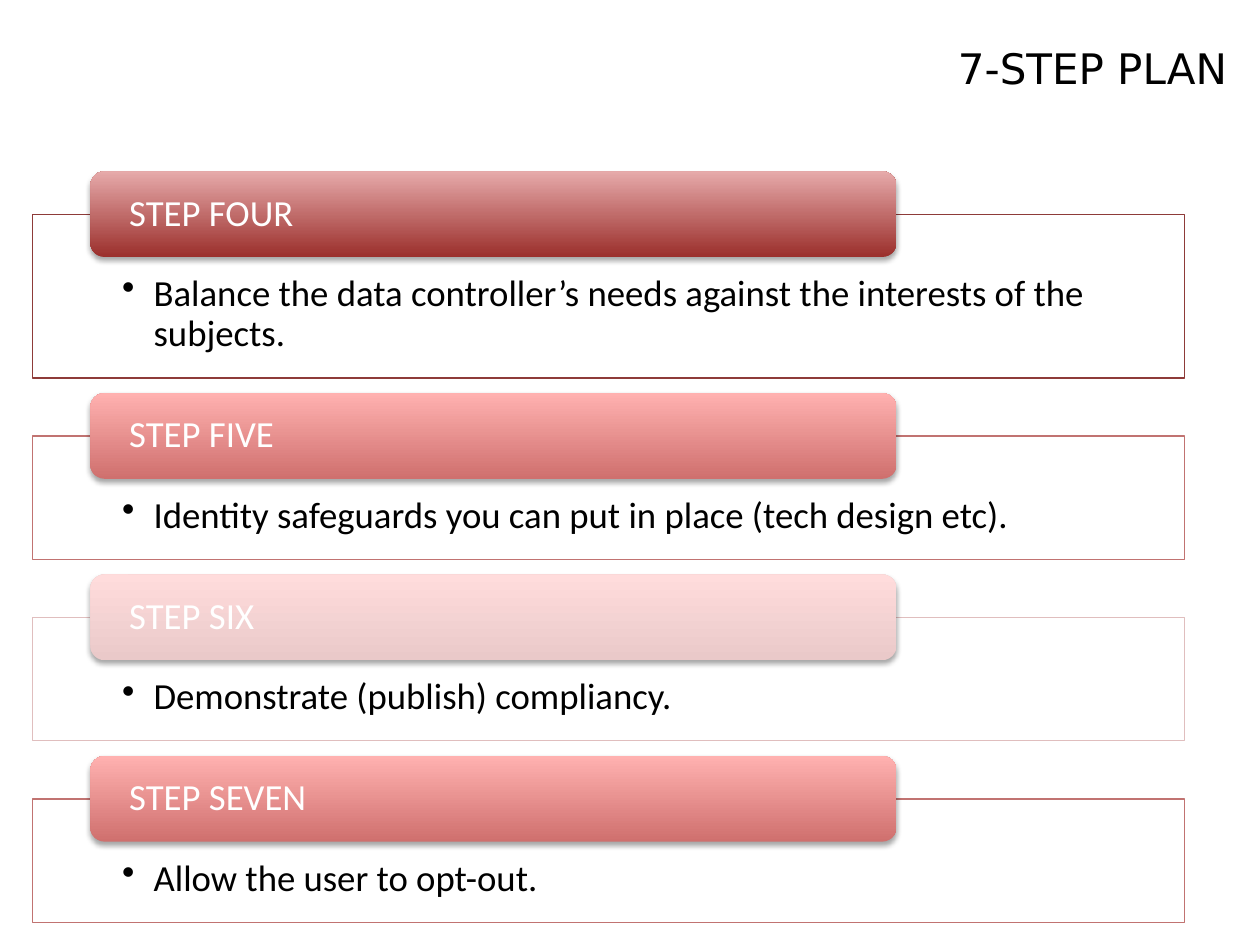
from lxml import etree
from pptx import Presentation
from pptx.dml.color import RGBColor
from pptx.enum import shapes, text
from pptx.oxml import parse_xml
from pptx.oxml.ns import nsdecls, qn
from pptx.util import Pt

COLORS = {
    "text": "000000", "light": "FFFFFF",
    "dark_line": "8E3B39", "dark_low": "9B2F2C", "dark_high": "E6AAAA",
    "mid_line": "C17371", "mid_low": "CF706E", "mid_high": "FFB1B0",
    "pale_line": "E0BEBE", "pale_low": "EAC9C9", "pale_high": "FFDCDC",
}
STEPS = [
    ("STEP FOUR", "Balance the data controller’s needs against the interests of the subjects.", "dark", 93.6),
    ("STEP FIVE", "Identity safeguards you can put in place (tech design etc).", "mid", 70.56),
    ("STEP SIX", "Demonstrate (publish) compliancy.", "pale", 70.56),
    ("STEP SEVEN", "Allow the user to opt-out.", "mid", 70.56),
]
LEFT, TOP, WIDTH, GAP = 18.72, 122.4, 658.08, 33.12


def rgb(name):
    return RGBColor.from_string(COLORS[name])


def write(sp, content, size=21, font="Calibri", color="text", align=text.PP_ALIGN.LEFT,
          anchor=text.MSO_ANCHOR.TOP, insets=(7.2, 3.6, 7.2, 3.6), spacing=None, bullet=False):
    tf = sp.text_frame
    tf.word_wrap = True
    tf.auto_size = text.MSO_AUTO_SIZE.NONE
    tf.vertical_anchor = anchor
    tf.margin_left, tf.margin_top, tf.margin_right, tf.margin_bottom = map(Pt, insets)
    p = tf.paragraphs[0]
    p.alignment = align
    if spacing:
        p.line_spacing = spacing
    if bullet:
        pPr = p._p.get_or_add_pPr()
        pPr.set("marL", str(Pt(18)))
        pPr.set("indent", str(-Pt(18)))
        etree.SubElement(pPr, qn("a:buChar"), char="•")
    r = p.add_run()
    r.text = content
    r.font.size = Pt(size)
    r.font.name = font
    r.font.color.rgb = rgb(color)


def add_box(s, kind, x, y, w, h):
    sp = s.shapes.add_shape(kind, Pt(x), Pt(y), Pt(w), Pt(h))
    sp.shadow.inherit = False
    return sp


def add_shadow(sp):
    effects = sp._element.spPr.find(qn("a:effectLst"))
    effects.append(parse_xml(
        f'<a:outerShdw {nsdecls("a")} blurRad="{Pt(3.1)}" dist="{Pt(1.8)}" dir="5400000" '
        'rotWithShape="0"><a:srgbClr val="000000"><a:alpha val="35000"/></a:srgbClr></a:outerShdw>'))


def add_title(s, x, y, w, h):
    title = s.shapes.title
    title.left, title.top, title.width, title.height = map(Pt, (x, y, w, h))
    write(title, "7-STEP PLAN", size=24, font="DejaVu Sans", align=text.PP_ALIGN.RIGHT)


def add_step(s, x, y, w, h, heading, detail, tone):
    panel = add_box(s, shapes.MSO_SHAPE.RECTANGLE, x, y, w, h)
    panel.fill.solid()
    panel.fill.fore_color.rgb = rgb("light")
    fill_color = panel._element.spPr.find(qn("a:solidFill"))[0]
    etree.SubElement(fill_color, qn("a:alpha"), val="90000")
    panel.line.color.rgb = rgb(f"{tone}_line")
    panel.line.width = Pt(0.75)
    write(panel, detail, insets=(51.12, 34.56, 51.12, 11.52), spacing=0.9, bullet=True)

    header_h = 48.96
    header = add_box(s, shapes.MSO_SHAPE.ROUNDED_RECTANGLE,
                     x + w * 0.05, y - header_h / 2, w * 0.7, header_h)
    header.fill.gradient()
    header.fill.gradient_angle = 90
    for stop, end in zip(header.fill.gradient_stops, ("low", "high")):
        stop.color.rgb = rgb(f"{tone}_{end}")
    header.line.fill.background()
    add_shadow(header)
    write(header, heading, color="light", anchor=text.MSO_ANCHOR.MIDDLE,
          insets=(19.8, 0, 19.8, 0), spacing=0.9)


def main():
    prs = Presentation()
    prs.slide_width, prs.slide_height = Pt(720), Pt(540)
    s = prs.slides.add_slide(prs.slide_layouts[5])
    add_title(s, 203.76, 20.88, 504.72, 90)
    y = TOP
    for heading, detail, tone, h in STEPS:
        add_step(s, LEFT, y, WIDTH, h, heading, detail, tone)
        y += h + GAP
    prs.save("out.pptx")


if __name__ == "__main__":
    main()
